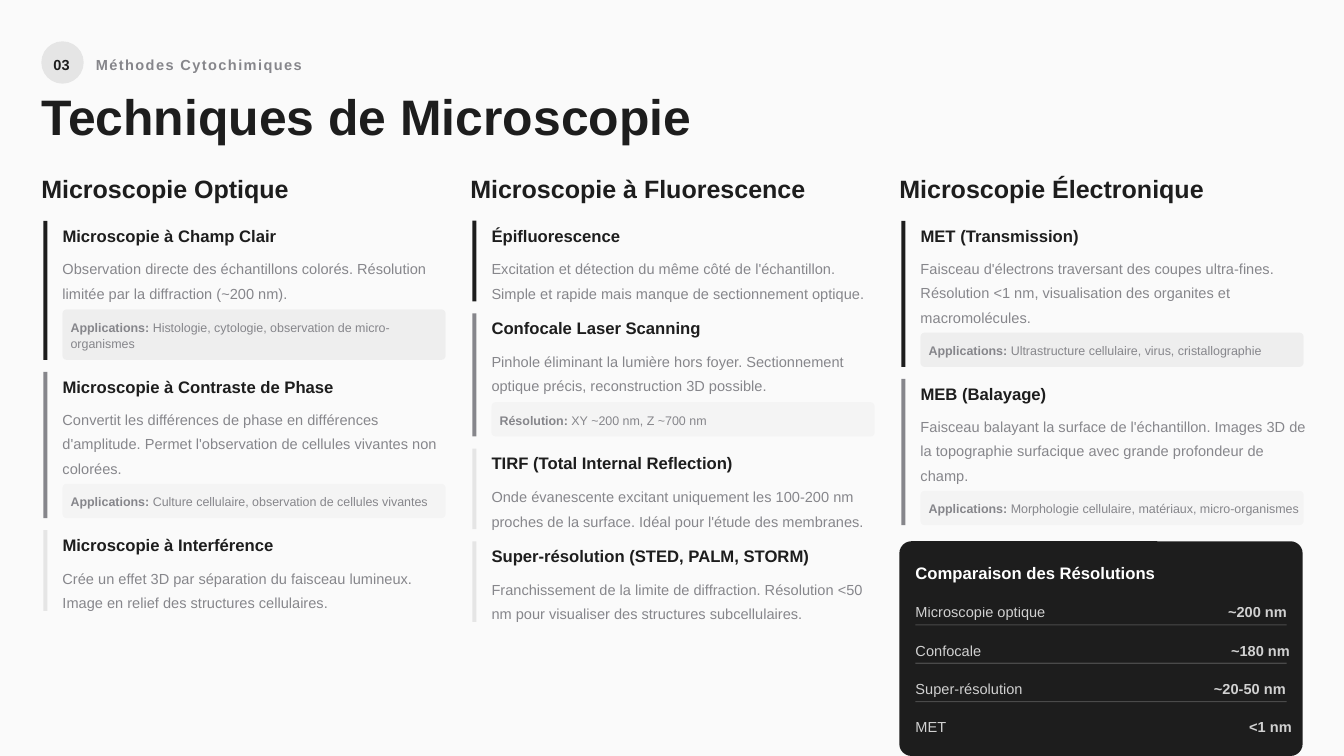
import pptx
import pptx.util
from lxml import etree
from pptx.dml.color import RGBColor
from pptx.enum.shapes import MSO_CONNECTOR, MSO_SHAPE
from pptx.enum.text import MSO_ANCHOR
from pptx.oxml.ns import qn

Inches = pptx.util.Inches

COLORS = {
    "paper": "FAFAFA",
    "ink": "1D1D1D",
    "grey": "86868B",
    "pale": "E5E5E5",
    "white": "FFFFFF",
}

COLUMN_WIDTH = 4.0
BODY_HEIGHT = {2: 0.47, 3: 0.7}
NOTE_HEIGHT = {1: 0.34, 2: 0.5}
NOTE_INSET = 0.08
METHOD_GAP = 0.12

# Each method: accent, name, description, description lines, note (label, text, lines)
COLUMNS = [
    ("Microscopie Optique", [
        ("ink", "Microscopie à Champ Clair",
         "Observation directe des échantillons colorés. Résolution limitée par la diffraction (~200 nm).", 2,
         ("Applications:", " Histologie, cytologie, observation de micro-organismes", 2)),
        ("grey", "Microscopie à Contraste de Phase",
         "Convertit les différences de phase en différences d'amplitude. "
         "Permet l'observation de cellules vivantes non colorées.", 3,
         ("Applications:", " Culture cellulaire, observation de cellules vivantes", 1)),
        ("pale", "Microscopie à Interférence",
         "Crée un effet 3D par séparation du faisceau lumineux. Image en relief des structures cellulaires.", 2,
         None),
    ]),
    ("Microscopie à Fluorescence", [
        ("ink", "Épifluorescence",
         "Excitation et détection du même côté de l'échantillon. "
         "Simple et rapide mais manque de sectionnement optique.", 2, None),
        ("grey", "Confocale Laser Scanning",
         "Pinhole éliminant la lumière hors foyer. Sectionnement optique précis, reconstruction 3D possible.", 2,
         ("Résolution:", " XY ~200 nm, Z ~700 nm", 1)),
        ("pale", "TIRF (Total Internal Reflection)",
         "Onde évanescente excitant uniquement les 100-200 nm proches de la surface. "
         "Idéal pour l'étude des membranes.", 2, None),
        ("pale", "Super-résolution (STED, PALM, STORM)",
         "Franchissement de la limite de diffraction. "
         "Résolution <50 nm pour visualiser des structures subcellulaires.", 2, None),
    ]),
    ("Microscopie Électronique", [
        ("ink", "MET (Transmission)",
         "Faisceau d'électrons traversant des coupes ultra-fines. "
         "Résolution <1 nm, visualisation des organites et macromolécules.", 3,
         ("Applications:", " Ultrastructure cellulaire, virus, cristallographie", 1)),
        ("grey", "MEB (Balayage)",
         "Faisceau balayant la surface de l'échantillon. "
         "Images 3D de la topographie surfacique avec grande profondeur de champ.", 3,
         ("Applications:", " Morphologie cellulaire, matériaux, micro-organismes", 1)),
    ]),
]

# Technique, resolution, width of the resolution text
RESOLUTIONS = [
    ("Microscopie optique", "~200 nm", 0.65),
    ("Confocale", "~180 nm", 0.62),
    ("Super-résolution", "~20-50 nm", 0.79),
    ("MET", "<1 nm", 0.44),
]


def rgb(color):
    return RGBColor.from_string(COLORS[color])


def set_opacity(element, percent):
    for color in element.iter(qn("a:srgbClr")):
        etree.SubElement(color, qn("a:alpha")).set("val", str(percent * 1000))


def add_block(slide, kind, left, top, width, height, color, radius=0, opacity=100):
    block = slide.shapes.add_shape(kind, Inches(left), Inches(top), Inches(width), Inches(height))
    block.shadow.inherit = False
    block.fill.solid()
    block.fill.fore_color.rgb = rgb(color)
    block.line.fill.background()
    if radius:
        block.adjustments[0] = radius / min(width, height)
    if opacity < 100:
        set_opacity(block.fill._xPr, opacity)


def add_text(slide, left, top, width, height, text, size, color,
             bold=False, spacing=1.2, label="", opacity=100, tracking=0, wrap=True):
    box = slide.shapes.add_textbox(Inches(left), Inches(top), Inches(width), Inches(height))
    frame = box.text_frame
    frame.margin_left = frame.margin_top = frame.margin_right = frame.margin_bottom = 0
    frame.word_wrap = wrap
    frame.vertical_anchor = MSO_ANCHOR.MIDDLE
    paragraph = frame.paragraphs[0]
    paragraph.line_spacing = spacing
    font = paragraph.font
    font.name = "Arial"
    font.size = pptx.util.Pt(size)
    font.bold = bold
    font.color.rgb = rgb(color)
    if label:
        label_run = paragraph.add_run()
        label_run.text = label
        label_run.font.bold = True
    paragraph.add_run().text = text
    if opacity < 100:
        set_opacity(paragraph._p, opacity)
    if tracking:
        font._rPr.set("spc", str(tracking * 100))


def add_header(slide, left, top):
    add_block(slide, MSO_SHAPE.OVAL, left, top, 0.42, 0.42, "pale")
    add_text(slide, left + 0.12, top + 0.11, 0.25, 0.21, "03", 10.4, "ink", bold=True, wrap=False)
    add_text(slide, left + 0.54, top + 0.11, 2.38, 0.21, "Méthodes Cytochimiques",
             10.4, "grey", bold=True, tracking=1, wrap=False)
    add_text(slide, left, top + 0.54, 12.76, 0.5, "Techniques de Microscopie",
             35.6, "ink", bold=True, spacing=0.8)


def add_method(slide, left, top, accent, name, description, lines, note):
    """Draws one method and returns its bottom edge."""
    text_left = left + 0.21
    add_text(slide, text_left, top, 3.88, 0.25, name, 11.9, "ink", bold=True)
    add_text(slide, text_left, top + 0.33, 3.87, BODY_HEIGHT[lines], description,
             10.4, "grey", spacing=1.4)
    bottom = top + 0.33 + BODY_HEIGHT[lines]
    if note:
        label, text, note_lines = note
        note_top = bottom + 0.08
        note_height = NOTE_HEIGHT[note_lines]
        add_block(slide, MSO_SHAPE.ROUNDED_RECTANGLE, text_left, note_top, COLUMN_WIDTH - 0.2,
                  note_height, accent, radius=0.04, opacity=5)
        add_text(slide, text_left + NOTE_INSET, note_top + NOTE_INSET, 3.69,
                 note_height - 2 * NOTE_INSET, text, 8.9, "grey", spacing=1.1, label=label)
        bottom = note_top + note_height
    # Accent bar
    add_block(slide, MSO_SHAPE.RECTANGLE, left + 0.02, top, 0.04, bottom - top, accent)
    return bottom


def add_column(slide, left, top, heading, methods):
    add_text(slide, left, top, 4.13, 0.33, heading, 17.9, "ink", bold=True, spacing=1.1)
    method_top = top + 0.5
    for method in methods:
        method_top = add_method(slide, left, method_top, *method) + METHOD_GAP


def add_comparison(slide, left, top, width, height):
    add_block(slide, MSO_SHAPE.ROUNDED_RECTANGLE, left, top, width, height, "ink", radius=0.12)
    inner_left = left + 0.16
    add_text(slide, inner_left, top + 0.17, 3.76, 0.25, "Comparaison des Résolutions",
             11.9, "white", bold=True)
    for index, (technique, resolution, resolution_width) in enumerate(RESOLUTIONS):
        row_top = top + 0.58 + 0.38 * index
        # Divider between rows
        if index < len(RESOLUTIONS) - 1:
            divider_y = Inches(row_top + 0.25)
            divider = slide.shapes.add_connector(
                MSO_CONNECTOR.STRAIGHT, Inches(inner_left), divider_y,
                Inches(left + width - 0.16), divider_y)
            divider.line.width = pptx.util.Pt(0.75)
            divider.line.color.rgb = rgb("white")
            properties = divider._element.spPr
            set_opacity(properties, 20)
            etree.SubElement(properties, qn("a:effectLst"))
        add_text(slide, inner_left, row_top, 1.38, 0.21, technique, 10.4, "white",
                 opacity=80, wrap=False)
        add_text(slide, left + width - 0.09 - resolution_width, row_top, resolution_width, 0.21,
                 resolution, 10.4, "white", bold=True, opacity=80, wrap=False)


def main():
    presentation = pptx.Presentation()
    presentation.slide_width = Inches(13.33)
    presentation.slide_height = Inches(7.5)
    slide = presentation.slides.add_slide(presentation.slide_layouts[6])
    slide.background.fill.solid()
    slide.background.fill.fore_color.rgb = rgb("paper")

    margin, last_left = 0.41, 8.92
    add_header(slide, margin, 0.41)
    pitch = (last_left - margin) / (len(COLUMNS) - 1)
    for index, (heading, methods) in enumerate(COLUMNS):
        add_column(slide, margin + index * pitch, 1.69, heading, methods)
    add_comparison(slide, last_left, 5.37, COLUMN_WIDTH, 2.13)

    presentation.save("out.pptx")


if __name__ == "__main__":
    main()
